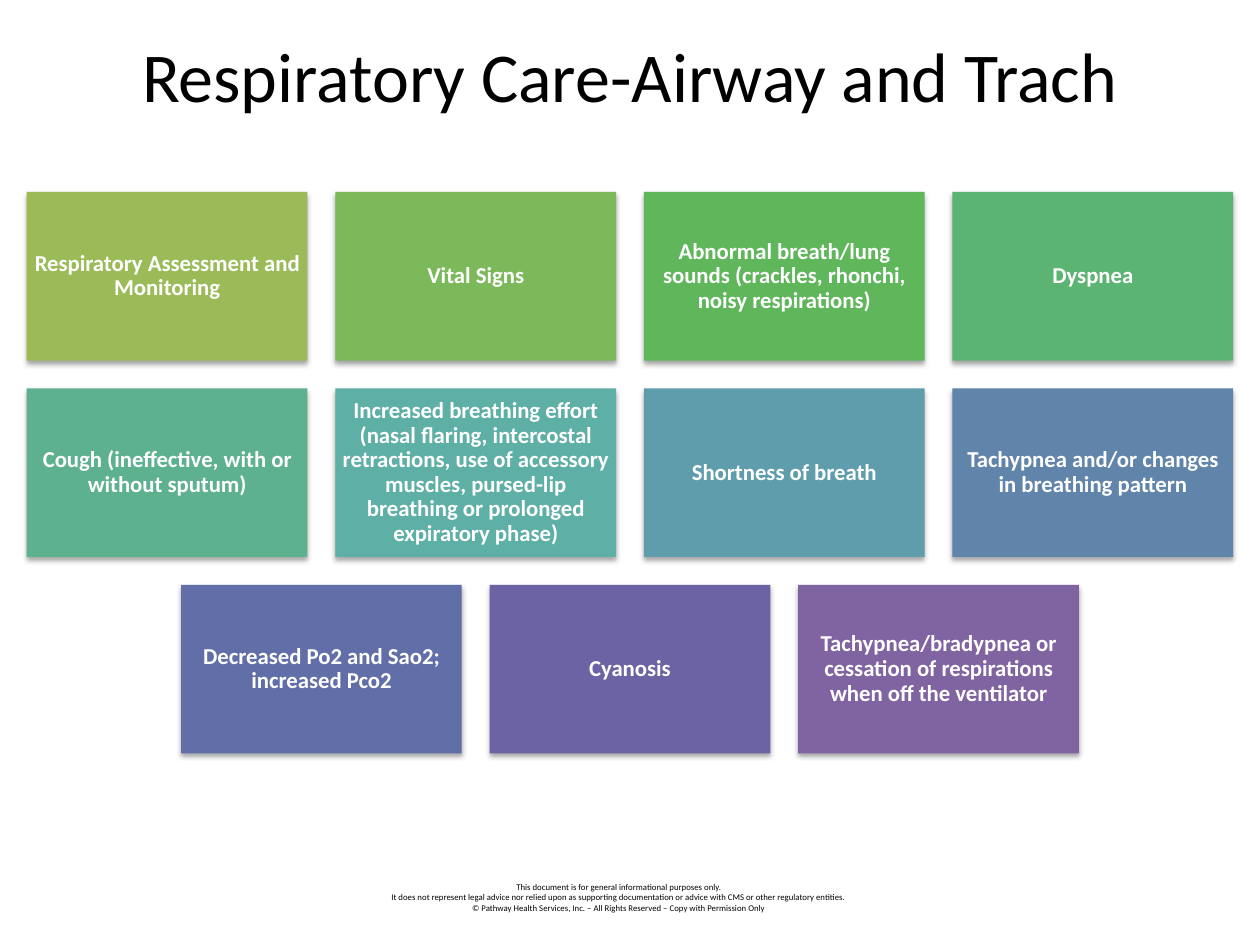
from lxml.etree import SubElement
from pptx import Presentation
from pptx.dml.color import RGBColor
from pptx.enum.shapes import MSO_SHAPE as Shape
from pptx.enum.text import MSO_ANCHOR as Anchor, PP_ALIGN as Align
from pptx.oxml.ns import qn
from pptx.util import Cm, Pt

SLIDE_WIDTH, SLIDE_HEIGHT = 25.4, 19.05
TILE_WIDTH, TILE_HEIGHT, GAP = 5.66, 3.4, 0.56
GRID_TOP = 3.87

TILE_ROWS = [
    [
        ("Respiratory Assessment and Monitoring", "9BBB59"),
        ("Vital Signs", "7CB95A"),
        ("Abnormal breath/lung sounds (crackles, rhonchi, noisy respirations)", "5FB65B"),
        ("Dyspnea", "5CB473"),
    ],
    [
        ("Cough (ineffective, with or without sputum)", "5DB18E"),
        ("Increased breathing effort (nasal flaring, intercostal retractions, "
         "use of accessory muscles, pursed-lip breathing or prolonged "
         "expiratory phase)", "5EAFA6"),
        ("Shortness of breath", "5F9DAC"),
        ("Tachypnea and/or changes in breathing pattern", "6084AA"),
    ],
    [
        ("Decreased Po2 and Sao2; increased Pco2", "626EA7"),
        ("Cyanosis", "6C63A5"),
        ("Tachypnea/bradypnea or cessation of respirations when off the ventilator", "8064A2"),
    ],
]

DISCLAIMER = [
    "This document is for general informational purposes only.",
    "It does not represent legal advice nor relied upon as supporting "
    "documentation or advice with CMS or other regulatory entities.",
    "© Pathway Health Services, Inc. – All Rights Reserved – Copy with Permission Only",
]


def color(value):
    return RGBColor.from_string(value)


def format_text(frame, size, hex_color, bold=False):
    frame.word_wrap = True
    for para in frame.paragraphs:
        para.alignment = Align.CENTER
        for span in para.runs:
            span.font.name = "Calibri"
            span.font.size = Pt(size)
            span.font.bold = bold
            span.font.color.rgb = color(hex_color)


def add_soft_shadow(shape):
    shape.shadow.inherit = False
    effects = shape._element.spPr.find(qn("a:effectLst"))
    shadow = SubElement(effects, qn("a:outerShdw"), blurRad=str(Pt(3.1)),
                        dist=str(Pt(1.8)), dir="5400000", rotWithShape="0")
    tint = SubElement(shadow, qn("a:srgbClr"), val="000000")
    SubElement(tint, qn("a:alpha"), val="35000")


def add_title(page, text):
    title = page.shapes.title
    title.left, title.top = Cm(1.86), Cm(0)
    title.width, title.height = Cm(21.67), Cm(3)
    frame = title.text_frame
    frame.text = text
    frame.vertical_anchor = Anchor.MIDDLE
    format_text(frame, 40, "000000")


def add_tile(page, left, top, text, fill):
    tile = page.shapes.add_shape(Shape.RECTANGLE, Cm(left), Cm(top),
                                 Cm(TILE_WIDTH), Cm(TILE_HEIGHT))
    tile.fill.solid()
    tile.fill.fore_color.rgb = color(fill)
    tile.line.fill.background()
    add_soft_shadow(tile)
    frame = tile.text_frame
    frame.text = text
    frame.vertical_anchor = Anchor.MIDDLE
    frame.margin_left = frame.margin_right = Cm(0.13)
    frame.margin_top = frame.margin_bottom = Cm(0.13)
    frame.paragraphs[0].line_spacing = 0.9
    format_text(frame, 13, "FFFFFF", bold=True)


def add_tile_grid(page):
    for row, tiles in enumerate(TILE_ROWS):
        row_width = len(tiles) * (TILE_WIDTH + GAP) - GAP
        row_left = (SLIDE_WIDTH - row_width) / 2
        top = GRID_TOP + row * (TILE_HEIGHT + GAP)
        for column, (text, fill) in enumerate(tiles):
            add_tile(page, row_left + column * (TILE_WIDTH + GAP), top, text, fill)


def add_disclaimer(page):
    box = page.shapes.add_textbox(Cm(6.98), Cm(17.65), Cm(11), Cm(0.89))
    box.text_frame.text = "\n".join(DISCLAIMER)
    format_text(box.text_frame, 5, "000000")


def main():
    deck = Presentation()
    deck.slide_width, deck.slide_height = Cm(SLIDE_WIDTH), Cm(SLIDE_HEIGHT)
    page = deck.slides.add_slide(deck.slide_layouts[5])
    add_title(page, "Respiratory Care-Airway and Trach")
    add_tile_grid(page)
    add_disclaimer(page)
    deck.save("out.pptx")


if __name__ == "__main__":
    main()
